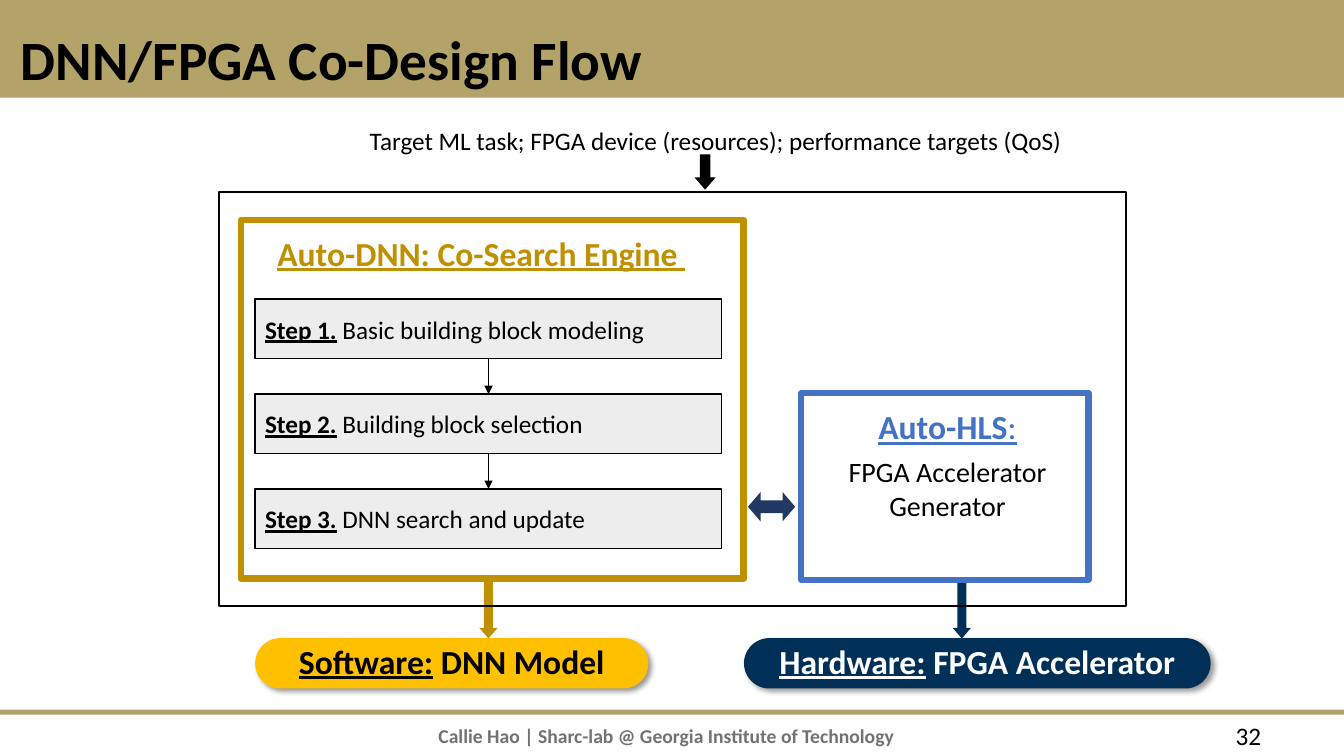
from dataclasses import dataclass
from typing import Any, Optional

from lxml import etree
from pptx import Presentation
from pptx.dml.color import RGBColor
from pptx.enum.shapes import MSO_CONNECTOR, MSO_SHAPE
from pptx.enum.text import MSO_ANCHOR, PP_ALIGN
from pptx.oxml import parse_xml
from pptx.oxml.ns import nsdecls, qn
from pptx.util import Cm, Pt

RECT = MSO_SHAPE.RECTANGLE
PILL = MSO_SHAPE.ROUNDED_RECTANGLE
DOWN = MSO_SHAPE.DOWN_ARROW
BOTH_WAYS = MSO_SHAPE.LEFT_RIGHT_ARROW
STRAIGHT = MSO_CONNECTOR.STRAIGHT
LEFT, CENTER = PP_ALIGN.LEFT, PP_ALIGN.CENTER
TOP, MIDDLE = MSO_ANCHOR.TOP, MSO_ANCHOR.MIDDLE

FONT = "Calibri"
BLACK, WHITE, GRAY, PALE = "000000", "FFFFFF", "767171", "EDEDED"
TAN, GOLD, YELLOW = "B3A369", "BF9000", "FFC000"
NAVY, BLUE, INDIGO = "003057", "4472C4", "203864"

SLIDE_WIDTH = 33.87
STEP_LEFT, STEP_TOP, STEP_WIDTH, STEP_HEIGHT = 6.43, 7.54, 11.76, 1.5
STEP_PITCH = 2.39
STEP_AXIS = STEP_LEFT + STEP_WIDTH / 2
STEPS = ["Basic building block modeling", "Building block selection", "DNN search and update"]


@dataclass(frozen=True)
class Box:
    left: float
    top: float
    width: float
    height: float


@dataclass(frozen=True)
class Run:
    text: str
    size: float
    color: str = BLACK
    bold: bool = False
    underline: bool = False


@dataclass(frozen=True)
class Panel:
    box: Box
    fill: Optional[str] = None
    line: Optional[str] = None
    weight: float = 1
    kind: Any = RECT
    adjustments: tuple[float, ...] = ()
    shadow: bool = False


@dataclass(frozen=True)
class DownArrow:
    axis: float
    top: float
    width: float
    height: float
    color: str


@dataclass(frozen=True)
class Output:
    label: str
    product: str
    box: Box
    fill: str
    ink: str


ARROWS = [
    DownArrow(17.77, 3.89, 0.53, 0.89, BLACK),
    DownArrow(STEP_AXIS, 14.59, 0.46, 1.5, GOLD),
    DownArrow(24.24, 14.59, 0.46, 1.5, NAVY),
]
OUTPUTS = [
    Output("Software:", " DNN Model", Box(6.43, 16.08, 9.91, 1.27), YELLOW, BLACK),
    Output("Hardware:", " FPGA Accelerator", Box(18.75, 16.08, 11.76, 1.27), NAVY, WHITE),
]


def rgb(color: str) -> RGBColor:
    return RGBColor.from_string(color)


def place(box: Box) -> tuple[Cm, Cm, Cm, Cm]:
    return Cm(box.left), Cm(box.top), Cm(box.width), Cm(box.height)


def write(shape: Any, *paragraphs: list[Run], align: Any = LEFT, anchor: Any = TOP,
          spacing: float = 1, gap: float = 0, frame_format: Optional[dict[str, Any]] = None) -> None:
    frame = shape.text_frame
    settings = {"word_wrap": True, "vertical_anchor": anchor} | (frame_format or {})
    for name, value in settings.items():
        setattr(frame, name, value)
    for index, runs in enumerate(paragraphs):
        paragraph = frame.add_paragraph() if index else frame.paragraphs[0]
        layout = {"alignment": align, "line_spacing": spacing,
                  "space_before": Pt(gap if index else 0)}
        for name, value in layout.items():
            setattr(paragraph, name, value)
        for part in runs:
            run = paragraph.add_run()
            run.text = part.text
            style = {"name": FONT, "size": Pt(part.size), "bold": part.bold,
                     "underline": part.underline}
            for name, value in style.items():
                setattr(run.font, name, value)
            run.font.color.rgb = rgb(part.color)


def add_panel(slide: Any, panel: Panel) -> Any:
    shape = slide.shapes.add_shape(panel.kind, *place(panel.box))
    shape.shadow.inherit = False
    for index, value in enumerate(panel.adjustments):
        shape.adjustments[index] = value
    if panel.fill:
        shape.fill.solid()
        shape.fill.fore_color.rgb = rgb(panel.fill)
    else:
        shape.fill.background()
    if panel.line:
        shape.line.color.rgb = rgb(panel.line)
        shape.line.width = Pt(panel.weight)
    else:
        shape.line.fill.background()
    if panel.shadow:
        effects = shape.element.spPr.find(qn("a:effectLst"))
        effects.append(parse_xml(
            f'<a:outerShdw {nsdecls("a")} blurRad="{Pt(4)}" dist="{Pt(3)}" dir="2700000" '
            'algn="tl" rotWithShape="0"><a:srgbClr val="000000"><a:alpha val="40000"/>'
            '</a:srgbClr></a:outerShdw>'))
    return shape


def add_text(slide: Any, box: Box, *paragraphs: list[Run], **options: Any) -> None:
    write(slide.shapes.add_textbox(*place(box)), *paragraphs, **options)


def add_down_arrow(slide: Any, arrow: DownArrow) -> None:
    box = Box(arrow.axis - arrow.width / 2, arrow.top, arrow.width, arrow.height)
    add_panel(slide, Panel(box, arrow.color, kind=DOWN, adjustments=(0.5, 0.58)))


def add_step_link(slide: Any, top: float, bottom: float) -> None:
    link = slide.shapes.add_connector(STRAIGHT, Cm(STEP_AXIS), Cm(top), Cm(STEP_AXIS), Cm(bottom))
    link.line.color.rgb = rgb(BLACK)
    link.line.width = Pt(1)
    etree.SubElement(link.line._get_or_add_ln(), qn("a:tailEnd"), type="triangle")
    etree.SubElement(link.element.spPr, qn("a:effectLst"))


def add_steps(slide: Any) -> None:
    for index, action in enumerate(STEPS):
        top = STEP_TOP + index * STEP_PITCH
        step = add_panel(slide, Panel(Box(STEP_LEFT, top, STEP_WIDTH, STEP_HEIGHT), PALE, BLACK))
        write(step, [Run(f"Step {index + 1}.", 18, bold=True, underline=True),
                     Run(f" {action}", 18)], anchor=MIDDLE)
        if index:
            add_step_link(slide, top - STEP_PITCH + STEP_HEIGHT, top)


def add_output(slide: Any, output: Output) -> None:
    pill = add_panel(slide, Panel(output.box, output.fill, kind=PILL, adjustments=(0.5,),
                                  shadow=True))
    write(pill, [Run(output.label, 24, output.ink, True, True),
                 Run(output.product, 24, output.ink, True)],
          align=CENTER, anchor=MIDDLE, spacing=0.9)


def main() -> None:
    deck = Presentation()
    deck.slide_width, deck.slide_height = Cm(SLIDE_WIDTH), Cm(19.05)
    slide = deck.slides.add_slide(deck.slide_layouts[6])

    add_panel(slide, Panel(Box(0, 17.88, SLIDE_WIDTH, 0.13), TAN))
    add_panel(slide, Panel(Box(0, 0, SLIDE_WIDTH, 2.46), TAN))
    add_text(slide, Box(10.8, 18.11, 12.98, 0.84),
             [Run("Callie Hao | Sharc-lab @ Georgia Institute of Technology", 14, GRAY, True)])
    add_text(slide, Box(30.89, 18.03, 1.98, 0.84), [Run("32", 18)])
    add_text(slide, Box(0.28, 0.71, 31.45, 1.73),
             [Run("DNN/FPGA Co-Design Flow", 39.6, bold=True)], anchor=MIDDLE, spacing=0.9)

    targets = add_panel(slide, Panel(Box(8.23, 2.92, 19.61, 1.24), WHITE))
    write(targets, [Run("Target ML task; FPGA device (resources); performance targets (QoS)", 18)],
          align=CENTER, anchor=MIDDLE)

    add_panel(slide, Panel(Box(18.85, 12.4, 1.19, 0.74), INDIGO, kind=BOTH_WAYS,
                           adjustments=(0.44, 0.43)))
    add_text(slide, Box(19.84, 10.11, 8.08, 3.2),
             [Run("Auto-HLS", 24, BLUE, True, True), Run(":", 24, BLUE, underline=True)],
             [Run("FPGA Accelerator Generator", 20)], align=CENTER, gap=6)

    add_panel(slide, Panel(Box(6.07, 5.54, 12.67, 9.04), line=GOLD, weight=4.5))
    add_text(slide, Box(6.43, 5.36, 11.96, 2.16),
             [Run("Auto-DNN: Co-Search Engine ", 24, GOLD, True, True)],
             anchor=MIDDLE, spacing=0.9, frame_format={"margin_left": Cm(0.56)})
    add_steps(slide)
    for arrow in ARROWS:
        add_down_arrow(slide, arrow)
    add_panel(slide, Panel(Box(5.51, 4.83, 22.86, 10.44), line=BLACK, weight=1.5))
    for output in OUTPUTS:
        add_output(slide, output)
    add_panel(slide, Panel(Box(20.19, 9.91, 7.24, 4.7), line=BLUE, weight=4.5))

    deck.save("out.pptx")


if __name__ == "__main__":
    main()
